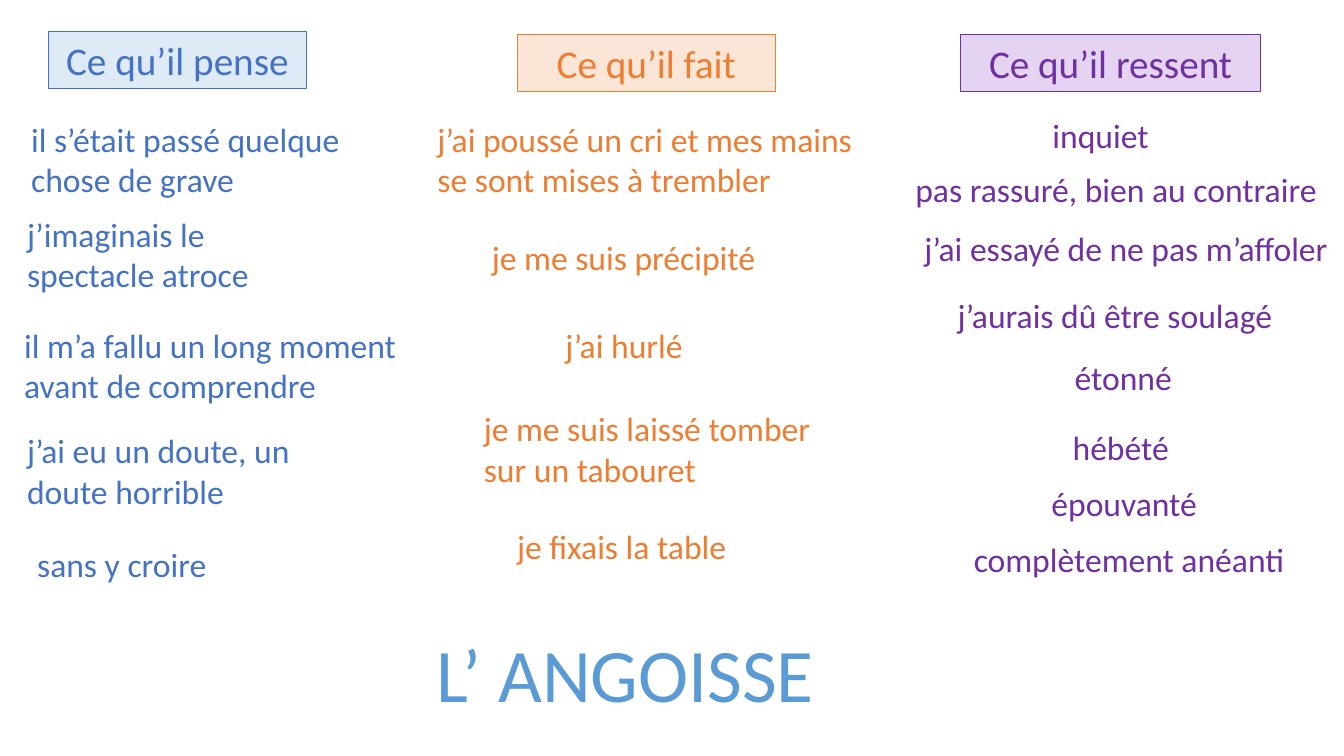
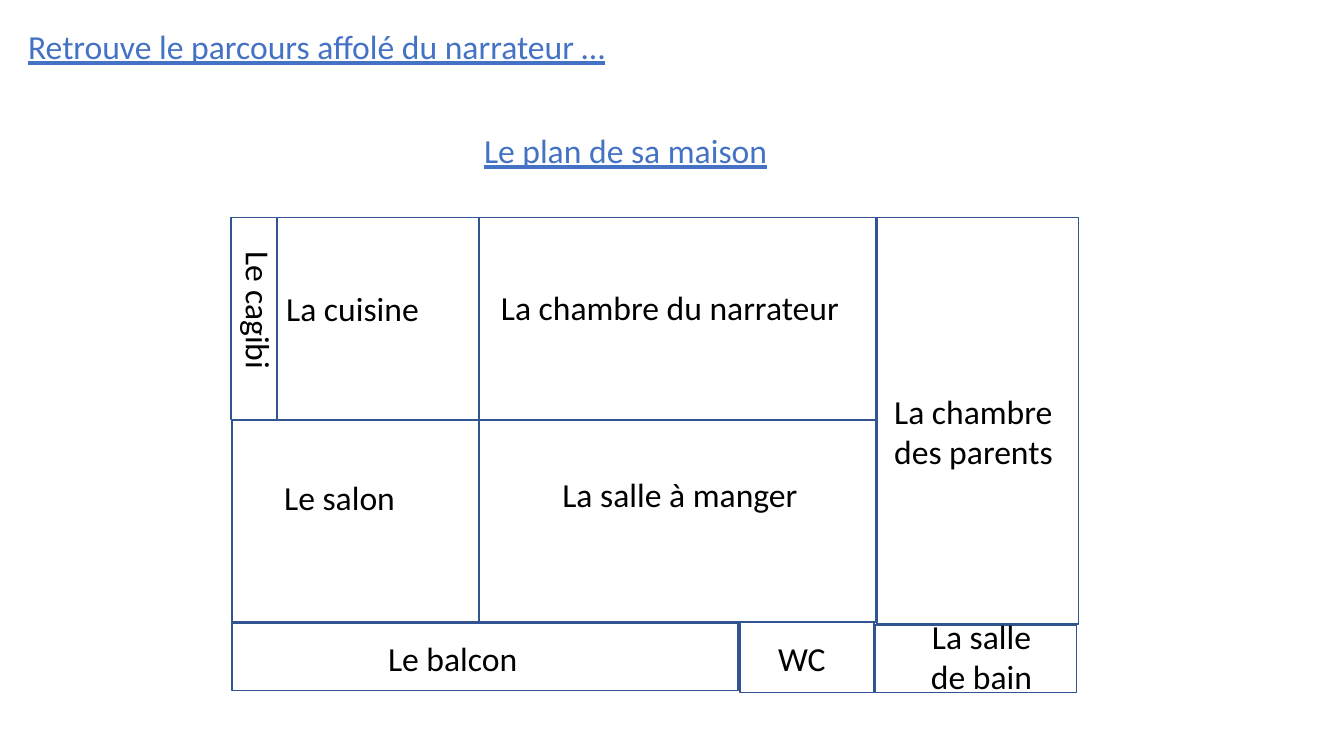
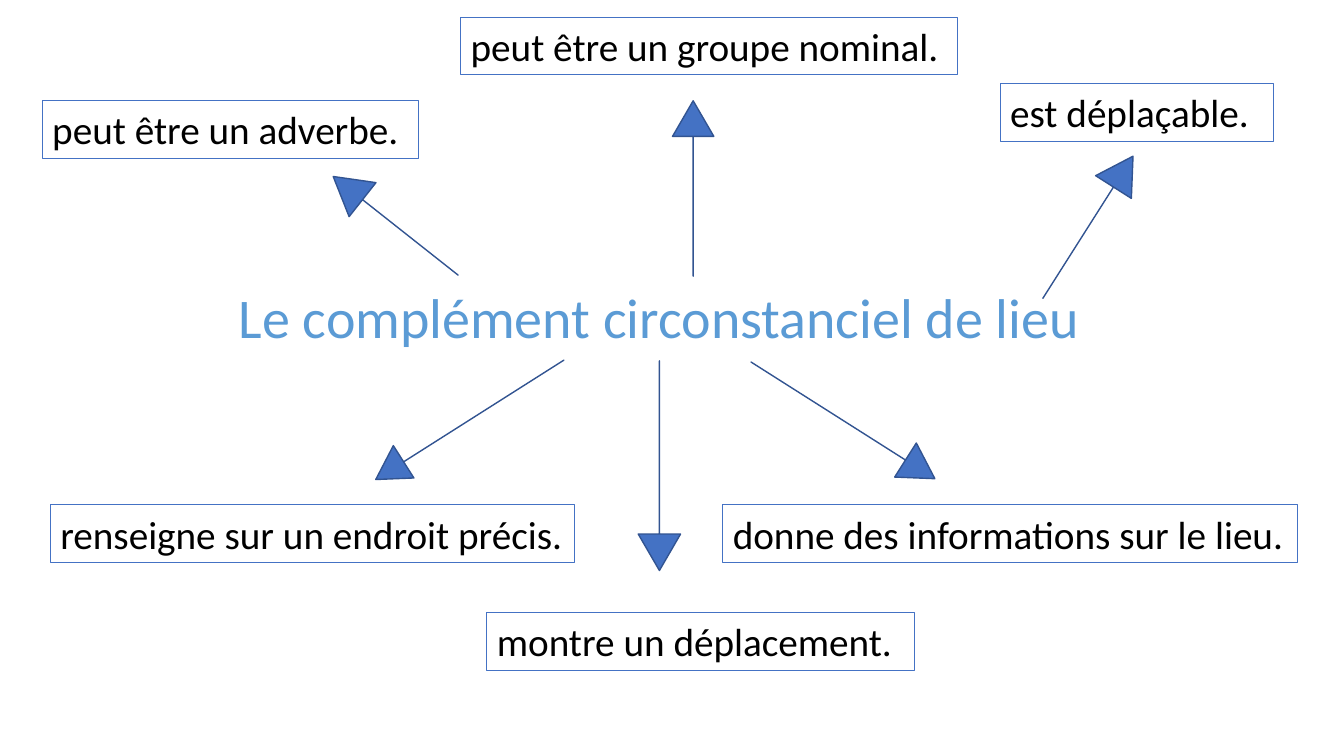
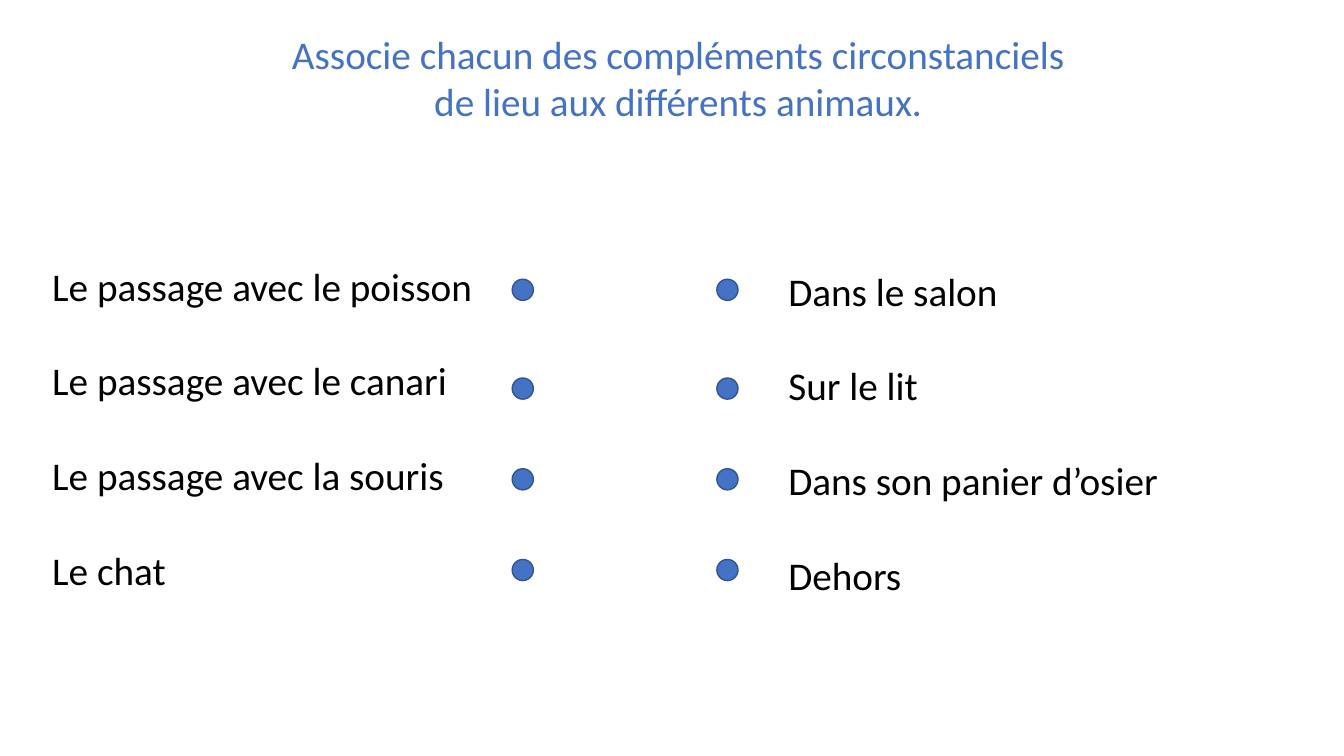
from pptx import Presentation
from pptx import util as u
from pptx.dml.color import RGBColor
from pptx.enum import shapes, text

# Shared style
PX = 9144  # 100 px to the inch
FONT = "Calibri"
BLACK, BLUE, ORANGE, PURPLE = "000000", "4472C4", "ED7D31", "7030A0"
TITLE_BLUE, OUTLINE = "5B9BD5", "325491"
LEFT, CENTER = text.PP_ALIGN.LEFT, text.PP_ALIGN.CENTER


def px(*lengths):
    return [u.Emu(length * PX) for length in lengths]


def rgb(value):
    return RGBColor.from_string(value)


def add_slide(presentation):
    return presentation.slides.add_slide(presentation.slide_layouts[6])


def add_text(slide, box, lines, size=24, color=BLACK, align=LEFT,
             underline=None, gap=0, rotation=0):
    """Text box with one paragraph per line; gap in points between them."""
    shape = slide.shapes.add_textbox(*px(*box))
    shape.rotation = rotation
    frame = shape.text_frame
    frame.word_wrap = True
    frame.text = lines
    for index, paragraph in enumerate(frame.paragraphs):
        paragraph.alignment = align
        paragraph.space_before = u.Pt(gap if index else 0)
        font = paragraph.font
        font.name, font.size, font.underline = FONT, u.Pt(size), underline
        font.color.rgb = rgb(color)
    return shape


def add_framed_text(slide, box, line, color=BLACK, border=BLUE, fill=None,
                    align=LEFT):
    shape = add_text(slide, box, line, 28, color, align)
    shape.line.color.rgb = rgb(border)
    shape.line.width = u.Pt(0.75)
    if fill:
        shape.fill.solid()
        shape.fill.fore_color.rgb = rgb(fill)


def add_figure(slide, kind, box, fill=None, rotation=0):
    """Preset shape with the shared dark blue outline."""
    shape = slide.shapes.add_shape(kind, *px(*box))
    shape.shadow.inherit = False
    shape.rotation = rotation
    shape.line.color.rgb = rgb(OUTLINE)
    shape.line.width = u.Pt(1)
    if fill:
        shape.fill.solid()
        shape.fill.fore_color.rgb = rgb(fill)
    else:
        shape.fill.background()
    return shape


def add_arrow(slide, box, rotation):
    arrow = add_figure(slide, shapes.MSO_SHAPE.UP_ARROW, box, BLUE, rotation)
    arrow.adjustments[0] = 0
    arrow.adjustments[1] = 0.863


def add_column(slide, heading, box, color, fill, phrases):
    add_framed_text(slide, box, heading, color, color, fill, CENTER)
    for left, top, width, phrase in phrases:
        add_text(slide, (left, top, width, 50), phrase, color=color)


def anguish_slide(presentation):
    slide = add_slide(presentation)
    add_column(slide, "Ce qu’il pense", (48, 31, 256, 57), BLUE, "DEEBF7", [
        (21, 113, 332, "il s’était passé quelque chose de grave"),
        (17, 207, 316, "j’imaginais le spectacle atroce"),
        (14, 317, 418, "il m’a fallu un long moment avant de comprendre"),
        (17, 422, 281, "j’ai eu un doute, un doute horrible"),
        (27, 535, 203, "sans y croire"),
    ])
    add_column(slide, "Ce qu’il fait", (513, 34, 256, 57), ORANGE, "FBE5D6", [
        (424, 113, 436, "j’ai poussé un cri et mes mains se sont mises à trembler"),
        (478, 230, 309, "je me suis précipité"),
        (551, 317, 179, "j’ai hurlé"),
        (470, 400, 354, "je me suis laissé tomber sur un tabouret"),
        (503, 517, 241, "je fixais la table"),
    ])
    add_column(slide, "Ce qu’il ressent", (953, 34, 297, 57), PURPLE, "E4D3F1", [
        (1034, 109, 134, "inquiet"),
        (898, 163, 425, "pas rassuré, bien au contraire"),
        (907, 221, 436, "j’ai essayé de ne pas m’affoler"),
        (940, 288, 340, "j’aurais dû être soulagé"),
        (1056, 349, 119, "étonné"),
        (1054, 419, 122, "hébété"),
        (1033, 474, 204, "épouvanté"),
        (956, 530, 340, "complètement anéanti"),
    ])
    add_text(slide, (408, 617, 424, 101), "L’ ANGOISSE", 54, TITLE_BLUE, CENTER)


def house_plan_slide(presentation):
    slide = add_slide(presentation)
    add_text(slide, (18, 21, 795, 50), "Retrouve le parcours affolé du narrateur …",
             color=BLUE, underline=True)
    add_text(slide, (372, 124, 497, 50), "Le plan de sa maison",
             color=BLUE, align=CENTER, underline=True)

    # Each room: walls, label box, label, label alignment, label rotation
    rooms = [
        ((475, 216, 394, 200), (487, 280, 360, 50), "La chambre du narrateur", LEFT, 0),
        ((475, 417, 394, 200), (548, 465, 266, 50), "La salle à manger", LEFT, 0),
        ((229, 216, 45, 200), (173, 299, 168, 50), "Le cagibi", LEFT, 90),
        ((275, 216, 200, 200), (274, 281, 168, 50), "La cuisine", LEFT, 0),
        ((230, 618, 502, 67), (375, 628, 158, 50), "Le balcon", LEFT, 0),
        ((870, 216, 200, 403), (877, 383, 191, 94), "La chambre des parents", LEFT, 0),
        ((230, 417, 245, 200), (272, 468, 158, 50), "Le salon", LEFT, 0),
        ((868, 620, 200, 67), (913, 606, 121, 91), "La salle de bain", CENTER, 0),
        ((734, 617, 133, 70), (762, 628, 83, 50), "WC", LEFT, 0),
    ]
    for walls, label_box, label, align, rotation in rooms:
        add_figure(slide, shapes.MSO_SHAPE.RECTANGLE, walls)
        add_text(slide, label_box, label, align=align, rotation=rotation)


def place_complement_slide(presentation):
    slide = add_slide(presentation)
    add_text(slide, (227, 275, 865, 77), "Le complément circonstanciel de lieu",
             40, TITLE_BLUE)
    # Each property: box, wording, arrow box, arrow rotation
    properties = [
        ((42, 100, 373, 57), "peut être un adverbe.", (371, 145, 43, 158), 308.3),
        ((457, 17, 493, 57), "peut être un groupe nominal.", (667, 100, 41, 174), 0),
        ((992, 83, 271, 57), "est déplaçable.", (1058, 142, 42, 167), 32.4),
        ((717, 501, 570, 57), "donne des informations sur le lieu.",
         (816, 309, 40, 216), 122.4),
        ((483, 608, 424, 57), "montre un déplacement.", (633, 358, 42, 208), 180),
        ((50, 501, 520, 57), "renseigne sur un endroit précis.",
         (447, 306, 38, 221), 237.6),
    ]
    for box, wording, arrow_box, rotation in properties:
        add_framed_text(slide, box, wording)
        add_arrow(slide, arrow_box, rotation)


def matching_slide(presentation):
    slide = add_slide(presentation)
    add_text(slide, (273, 25, 799, 104),
             "Associe chacun des compléments circonstanciels de lieu "
             "aux différents animaux.", 28, BLUE, CENTER)
    # Each side: text left, text top, dot left, lines
    sides = [
        (42, 255, 508, ["Le passage avec le poisson", "Le passage avec le canari",
                        "Le passage avec la souris", "Le chat"]),
        (772, 260, 711, ["Dans le salon", "Sur le lit",
                         "Dans son panier d’osier", "Dehors"]),
    ]
    for left, top, dot_left, lines in sides:
        add_text(slide, (left, top, 526, 340), "\n".join(lines), 28, gap=34)
        for dot_top in (277, 375, 465, 555):
            add_figure(slide, shapes.MSO_SHAPE.OVAL, (dot_left, dot_top, 21, 21), BLUE)


def main():
    presentation = Presentation()
    presentation.slide_width, presentation.slide_height = px(1333, 750)
    anguish_slide(presentation)
    house_plan_slide(presentation)
    place_complement_slide(presentation)
    matching_slide(presentation)
    presentation.save("out.pptx")


if __name__ == "__main__":
    main()
